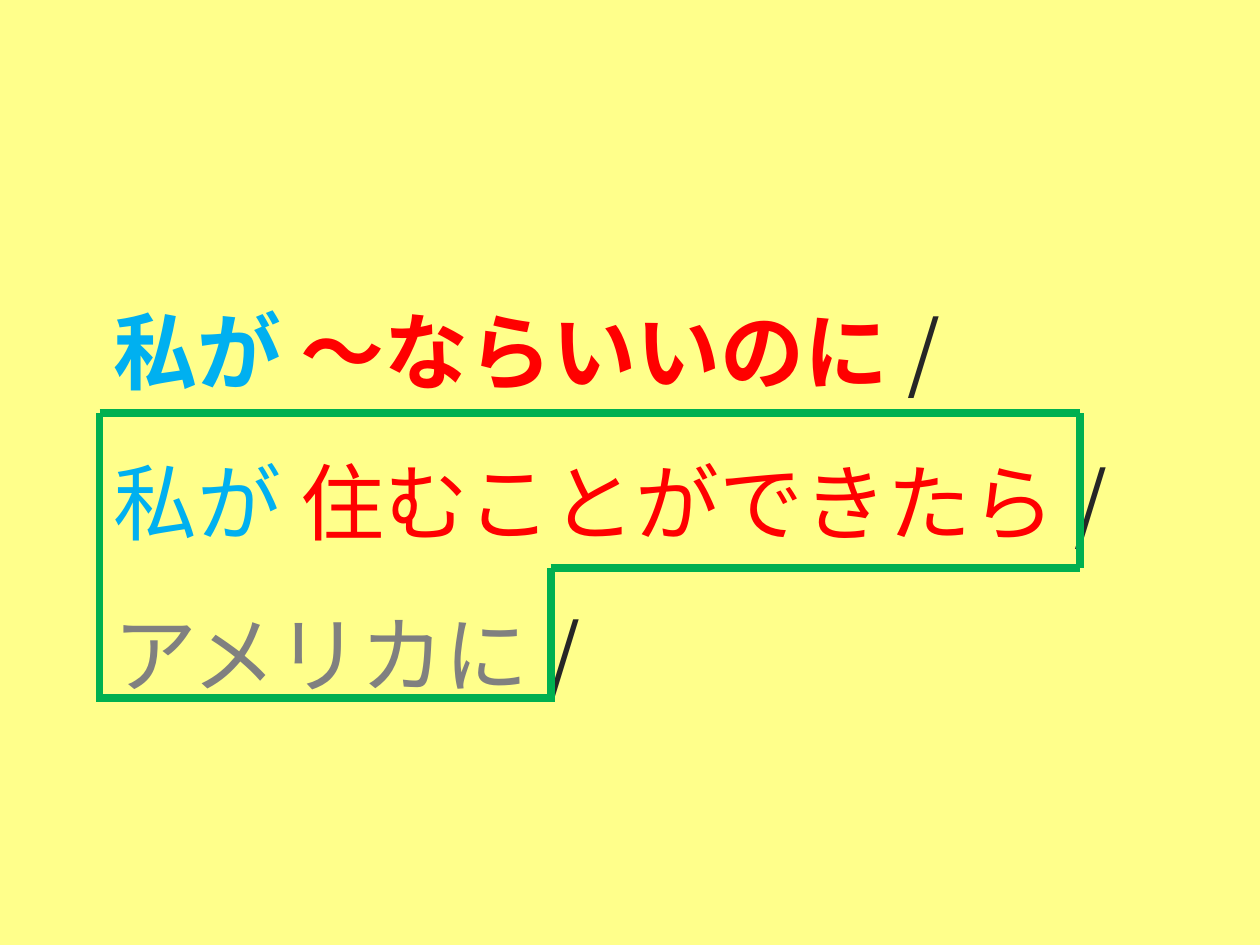
from dataclasses import dataclass

from lxml.etree import SubElement
from pptx import Presentation
from pptx.dml.color import RGBColor
from pptx.enum.shapes import MSO_CONNECTOR, MSO_SHAPE
from pptx.enum.text import MSO_AUTO_SIZE
from pptx.oxml.ns import qn
from pptx.util import Inches, Pt


@dataclass(frozen=True)
class Theme:
    font: str = "Noto Sans CJK JP"
    size: float = 48
    stroke: float = 4.5
    back: str = "FFFF8B"
    subject: str = "00B0F0"
    verb: str = "FF0000"
    place: str = "808080"
    slash: str = "262626"
    frame: str = "00B050"


THEME = Theme()

# Each run: text, colour, bold
LINES = [
    [("私が ", THEME.subject, True), ("～ならいいのに ", THEME.verb, True),
     ("/", THEME.slash, False)],
    [("私が ", THEME.subject, False), ("住むことができたら ", THEME.verb, False),
     ("/", THEME.slash, False)],
    [("アメリカに ", THEME.place, False), ("/", THEME.slash, False)],
]


def add_back(slide, width, height):
    shape = slide.shapes.add_shape(MSO_SHAPE.RECTANGLE, 0, 0, width, height)
    shape.shadow.inherit = False
    shape.fill.solid()
    shape.fill.fore_color.rgb = RGBColor.from_string(THEME.back)
    shape.line.fill.background()


def add_run(para, text, color, bold):
    run = para.add_run()
    run.text = text
    font = run.font
    font.name, font.size, font.bold = THEME.font, Pt(THEME.size), bold
    font.color.rgb = RGBColor.from_string(color)
    # Japanese glyphs take the East Asian typeface
    SubElement(font._element, qn("a:ea"), typeface=THEME.font)


def add_phrases(slide, left, top, width, height):
    box = slide.shapes.add_textbox(
        Inches(left), Inches(top), Inches(width), Inches(height))
    frame = box.text_frame
    frame.word_wrap = True
    frame.auto_size = MSO_AUTO_SIZE.SHAPE_TO_FIT_TEXT
    for index, runs in enumerate(LINES):
        para = frame.add_paragraph() if index else frame.paragraphs[0]
        para.line_spacing = 1.5
        for text, color, bold in runs:
            add_run(para, text, color, bold)


def add_line(group, start, end):
    line = group.shapes.add_connector(
        MSO_CONNECTOR.STRAIGHT, *map(Inches, start + end))
    line.line.color.rgb = RGBColor.from_string(THEME.frame)
    line.line.width = Pt(THEME.stroke)
    SubElement(line._element.spPr, qn("a:effectLst"))


def add_frame(slide, left, top, width, height, step_x, step_y):
    """Outline a box whose lower right corner is cut away at the step."""
    right, base = left + width, top + height
    mid_x, mid_y = left + step_x, top + step_y
    foot = base + 0.03  # long uprights overlap the bottom line
    group = slide.shapes.add_group_shape()
    for start, end in [
        ((left, top), (right, top)),
        ((left, base), (mid_x, base)),
        ((mid_x, mid_y), (right, mid_y)),
        ((left, top), (left, foot)),
        ((right, top), (right, mid_y)),
        ((mid_x, mid_y), (mid_x, foot)),
    ]:
        add_line(group, start, end)


def main():
    deck = Presentation()
    deck.slide_width, deck.slide_height = Inches(10), Inches(7.5)
    slide = deck.slides.add_slide(deck.slide_layouts[6])
    add_back(slide, deck.slide_width, deck.slide_height)
    add_phrases(slide, 0.8, 1.93, 8.41, 3.64)
    add_frame(slide, 0.79, 3.28, 7.78, 2.26, step_x=3.58, step_y=1.23)
    deck.save("out.pptx")


if __name__ == "__main__":
    main()
